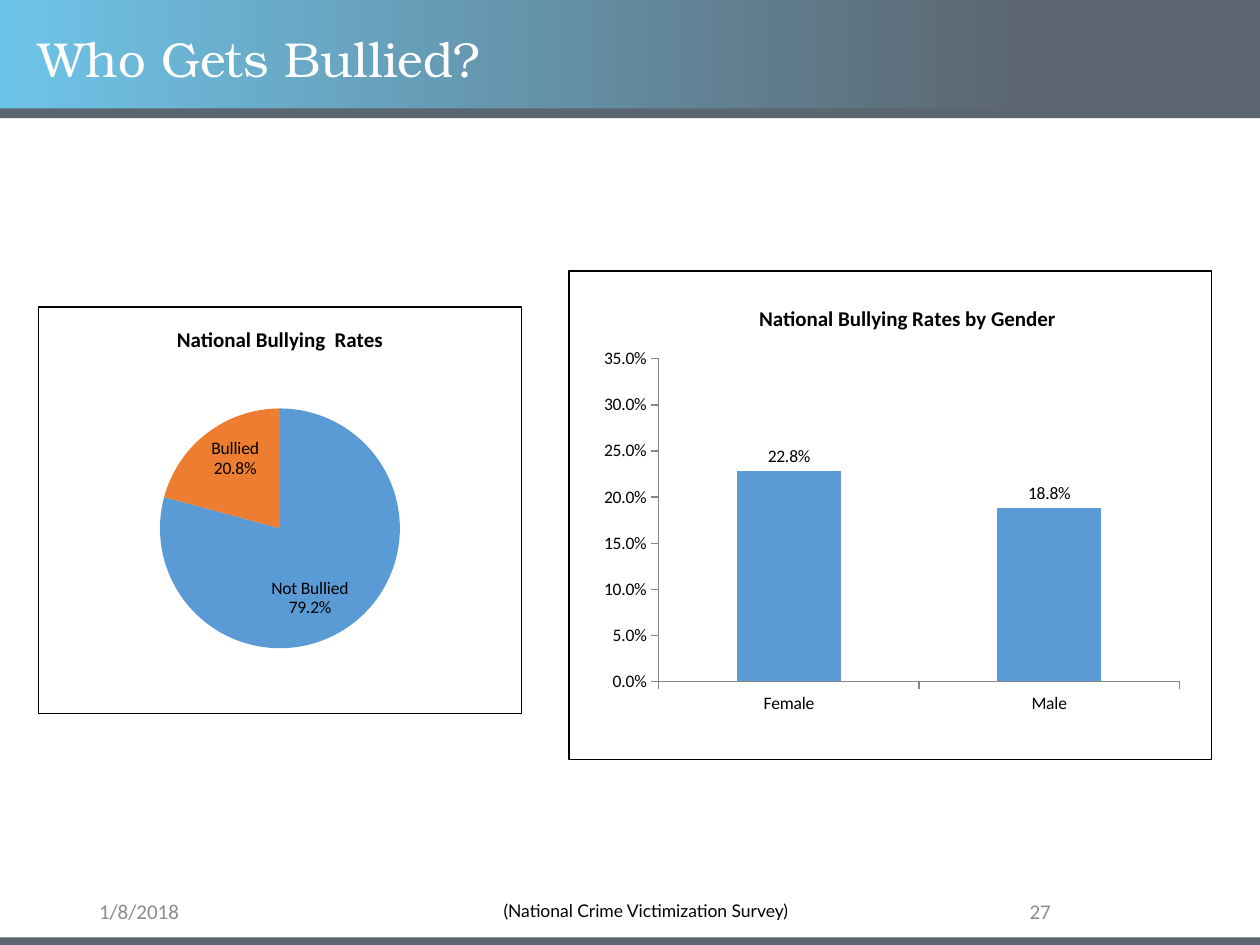
from dataclasses import dataclass

from pptx import Presentation
from pptx import util as u
from pptx.chart.data import CategoryChartData
from pptx.dml.color import RGBColor
from pptx.enum import chart as ch, shapes, text
from pptx.oxml import parse_xml
from pptx.oxml.ns import nsdecls, qn


@dataclass(frozen=True)
class Theme:
    slate: str = "5C6670"
    sky: str = "6EC4E8"
    white: str = "FFFFFF"
    black: str = "000000"
    muted: str = "8C8C8C"
    axis: str = "868686"
    blue: str = "5B9BD5"
    orange: str = "ED7D31"
    heading_font: str = "TeX Gyre Bonum"
    chart_font: str = "Calibri"
    note_font: str = "Lato"
    heading_size: int = 28
    label_size: int = 12
    small_size: int = 10


def apply(target, values):
    for name, value in values.items():
        setattr(target, name, value)


class SlideBuilder:
    def __init__(self, slide, theme):
        self.slide, self.theme = slide, theme

    def font(self, font, name, size, color, bold=False):
        apply(font, {"name": name, "size": u.Pt(size), "bold": bold})
        font.color.rgb = RGBColor.from_string(color)

    def band(self, top, height, gradient=None):
        bar = self.slide.shapes.add_shape(
            shapes.MSO_SHAPE.RECTANGLE, 0, u.Pt(top), u.Pt(720), u.Pt(height))
        bar.shadow.inherit = False
        bar.line.fill.background()
        if gradient:
            bar.fill.gradient()
            bar.fill.gradient_angle = 0
            for stop, (position, color) in zip(bar.fill.gradient_stops, gradient):
                stop.position = position
                stop.color.rgb = RGBColor.from_string(color)
        else:
            bar.fill.solid()
            bar.fill.fore_color.rgb = RGBColor.from_string(self.theme.slate)

    def title(self, wording, box):
        heading = self.slide.shapes.title
        apply(heading, dict(zip(("left", "top", "width", "height"), map(u.Pt, box))))
        frame = heading.text_frame
        apply(frame, {"text": wording, "word_wrap": True,
                      "auto_size": text.MSO_AUTO_SIZE.NONE,
                      "vertical_anchor": text.MSO_ANCHOR.MIDDLE})
        apply(frame.paragraphs[0], {"alignment": text.PP_ALIGN.LEFT, "line_spacing": 0.9})
        self.font(frame.paragraphs[0].runs[0].font, self.theme.heading_font,
                  self.theme.heading_size, self.theme.white)
        # Bring the title in front of the header band
        self.slide.shapes._spTree.append(heading._element)

    def text(self, wording, box, name, size, color, align, anchor, indent=0):
        frame = self.slide.shapes.add_textbox(*map(u.Pt, box)).text_frame
        apply(frame, {"text": wording, "word_wrap": True, "vertical_anchor": anchor})
        paragraph = frame.paragraphs[0]
        paragraph.alignment = align
        if indent:
            paragraph._p.get_or_add_pPr().set("marL", str(u.Pt(indent)))
        self.font(paragraph.runs[0].font, name, size, color)

    def layout(self, parent, index, inner=False, **fractions):
        for old in parent.findall(qn("c:layout")):
            parent.remove(old)
        target = '<c:layoutTarget val="inner"/>' if inner else ""
        modes = "".join(f'<c:{key}Mode val="edge"/>' for key in "xy")
        sizes = "".join(f'<c:{key} val="{value}"/>' for key, value in fractions.items())
        parent.insert(index, parse_xml(
            f'<c:layout {nsdecls("c")}><c:manualLayout>{target}{modes}{sizes}'
            '</c:manualLayout></c:layout>'))

    def chart(self, kind, heading, categories, values, box, plot_area):
        t = self.theme
        data = CategoryChartData(number_format="0.0%")
        data.categories = categories
        data.add_series("Series 1", values)
        chart = self.slide.shapes.add_chart(kind, *map(u.Pt, box), data).chart
        chart.has_legend = False
        self.font(chart.font, t.chart_font, t.small_size, t.black)

        # White panel with a thin black border
        chart._chartSpace.find(qn("c:txPr")).addprevious(parse_xml(
            f'<c:spPr {nsdecls("c", "a")}>'
            f'<a:solidFill><a:srgbClr val="{t.white}"/></a:solidFill>'
            f'<a:ln w="{u.Pt(0.75)}"><a:solidFill><a:srgbClr val="{t.black}"/>'
            '</a:solidFill></a:ln></c:spPr>'))

        chart.has_title = True
        frame = chart.chart_title.text_frame
        frame.text = heading
        self.font(frame.paragraphs[0].runs[0].font, t.chart_font, t.label_size, t.black, True)
        chart.chart_title.include_in_layout = False
        area = chart._chartSpace.find(".//" + qn("c:plotArea"))
        self.layout(area, 0, inner=True, **plot_area)

        plot = chart.plots[0]
        plot.has_data_labels = True
        apply(plot.data_labels, {"number_format": "0.0%", "number_format_is_linked": False})
        self.font(plot.data_labels.font, t.chart_font, t.small_size, t.black)
        return chart

    def paint(self, fmt, color):
        fmt.fill.solid()
        fmt.fill.fore_color.rgb = RGBColor.from_string(color)

    def pie(self, *args):
        plot = self.chart(ch.XL_CHART_TYPE.PIE, *args).plots[0]
        plot.vary_by_categories = True
        apply(plot.data_labels, {"show_percentage": True, "show_category_name": True,
                                 "show_value": False,
                                 "position": ch.XL_LABEL_POSITION.INSIDE_END})
        separator = parse_xml(f'<c:separator {nsdecls("c")}>\n</c:separator>')
        plot.data_labels._element.find(qn("c:showBubbleSize")).addnext(separator)
        for index, color in enumerate((self.theme.blue, self.theme.orange)):
            self.paint(plot.series[0].points[index].format, color)

    def columns(self, *args):
        chart = self.chart(ch.XL_CHART_TYPE.COLUMN_CLUSTERED, *args)
        plot = chart.plots[0]
        apply(plot, {"vary_by_categories": False, "gap_width": 150})
        apply(plot.data_labels, {"show_value": True,
                                 "position": ch.XL_LABEL_POSITION.OUTSIDE_END})
        self.paint(plot.series[0].format, self.theme.blue)
        for axis in (chart.category_axis, chart.value_axis):
            apply(axis, {"has_major_gridlines": False,
                         "major_tick_mark": ch.XL_TICK_MARK.OUTSIDE,
                         "minor_tick_mark": ch.XL_TICK_MARK.NONE})
            axis.format.line.color.rgb = RGBColor.from_string(self.theme.axis)
            axis.format.line.width = u.Pt(0.75)
        apply(chart.value_axis, {"minimum_scale": 0, "maximum_scale": 0.35,
                                 "major_unit": 0.05})
        apply(chart.value_axis.tick_labels, {"number_format": "0.0%",
                                             "number_format_is_linked": False})
        self.layout(chart.chart_title._element, 1, x=0.29, y=0.06)


def main():
    deck = Presentation()
    apply(deck, {"slide_width": u.Pt(720), "slide_height": u.Pt(540)})
    theme = Theme()
    builder = SlideBuilder(deck.slides.add_slide(deck.slide_layouts[5]), theme)
    align, anchor = text.PP_ALIGN, text.MSO_ANCHOR

    # Header and footer bands
    builder.band(0, 62.5, gradient=((0, theme.sky), (0.81, theme.slate)))
    builder.band(62, 5.5)
    builder.band(535.7, 4.3)
    builder.title("Who Gets Bullied?", (15, 15, 620.5, 41))

    # Date and slide number
    for wording, left, width, side in (("1/8/2018", 49.5, 162, align.LEFT),
                                       ("27", 508.5, 99, align.RIGHT)):
        builder.text(wording, (left, 512.5, width, 16.5), theme.chart_font,
                     theme.label_size, theme.muted, side, anchor.MIDDLE)

    # Overall rate and rate by gender
    builder.pie("National Bullying  Rates", ("Not Bullied", "Bullied"), (79.2, 20.8),
                (21.5, 175, 277, 233), {"x": 0.25, "y": 0.25, "w": 0.5, "h": 0.59})
    builder.columns("National Bullying Rates by Gender", ("Female", "Male"), (0.228, 0.188),
                    (324.7, 154.5, 368, 280), {"x": 0.14, "y": 0.18, "w": 0.81, "h": 0.66})

    # Source of the figures
    builder.text("(National Crime Victimization Survey)", (0, 511, 720, 23), theme.note_font,
                 theme.small_size, theme.black, align.CENTER, anchor.TOP, indent=18)

    deck.save("out.pptx")


if __name__ == "__main__":
    main()
